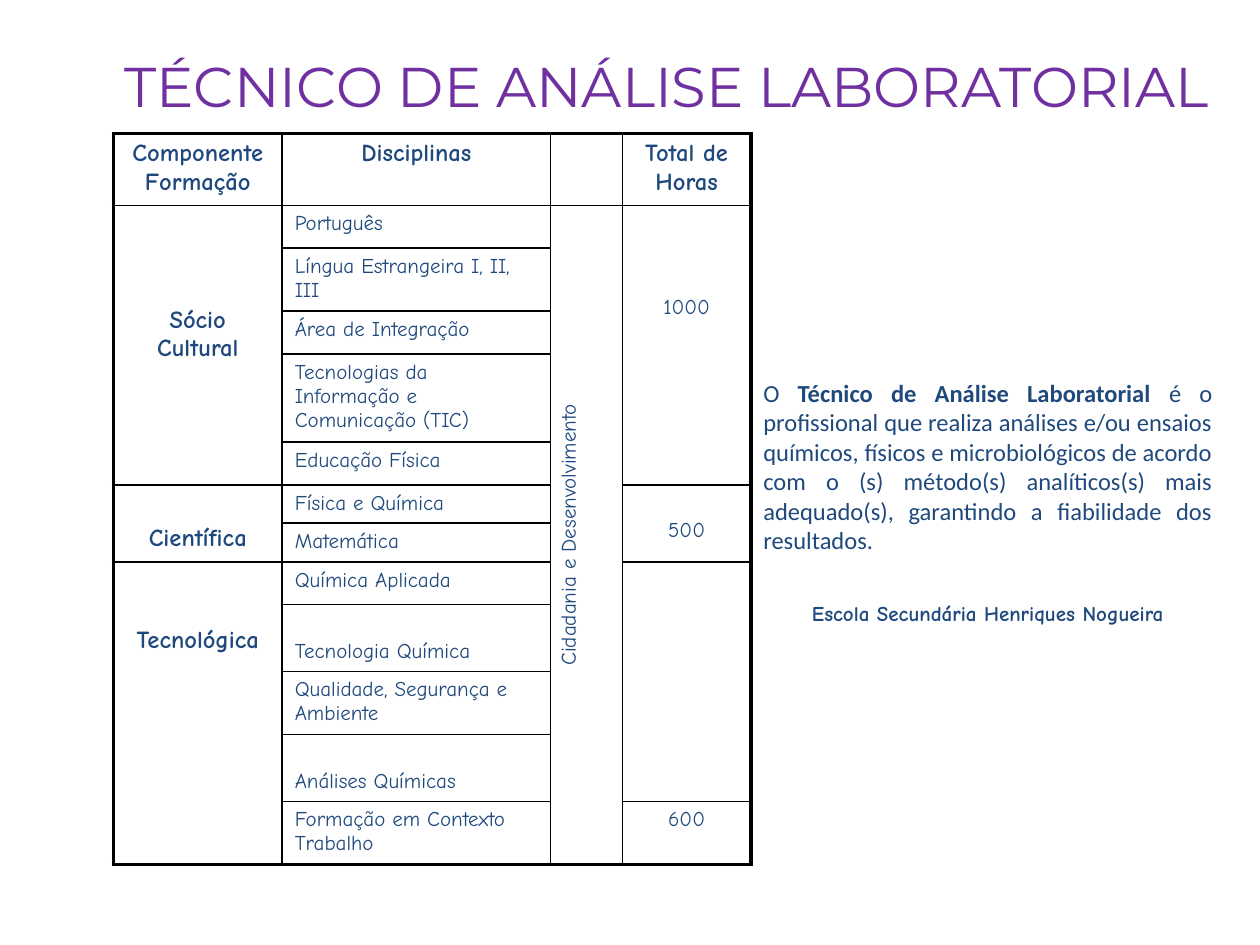
import pptx
import pptx.util
import pptx.dml.color
import pptx.enum.text
import pptx.oxml
import pptx.oxml.ns
from lxml import etree

Inches, Pt = pptx.util.Inches, pptx.util.Pt
ALIGN = pptx.enum.text.PP_ALIGN

COLORS = {"title": "7030A0", "text": "1F497D", "border": "000000"}
TITLE = "TÉCNICO DE ANÁLISE LABORATORIAL"
PROFILE = [
    ("O ", False),
    ("Técnico de Análise Laboratorial ", True),
    ("é o profissional que realiza análises e/ou ensaios químicos, físicos e "
     "microbiológicos de acordo com o (s) método(s) analíticos(s) mais "
     "adequado(s), garantindo a fiabilidade dos resultados.", False),
]
SCHOOL = "Escola Secundária Henriques Nogueira"
HEADERS = ["Componente Formação", "Disciplinas", "", "Total de Horas"]
SHARED_TOPIC = "Cidadania e Desenvolvimento"

# Text, row height, top margin
SUBJECTS = [
    ("Português", 0.34, 0.05),
    ("Língua Estrangeira I, II, III", 0.5, 0.05),
    ("Área de Integração", 0.34, 0.05),
    ("Tecnologias da Informação e Comunicação (TIC)", 0.7, 0.05),
    ("Educação Física", 0.34, 0.05),
    ("Física e Química", 0.3, 0.05),
    ("Matemática", 0.31, 0.05),
    ("Química Aplicada", 0.34, 0.05),
    ("Tecnologia Química", 0.52, 0.28),
    ("Qualidade, Segurança e Ambiente", 0.5, 0.05),
    ("Análises Químicas", 0.52, 0.28),
    ("Formação em Contexto Trabalho", 0.49, 0.05),
]
# Text, rows covered, top margin
COMPONENTS = [("Sócio Cultural", 5, 0.8), ("Científica", 2, 0.31), ("Tecnológica", 5, 0.51)]
HOURS = [("1000", 5, 0.72), ("500", 2, 0.27), ("", 4, 0.05), ("600", 1, 0.05)]
COLUMN_WIDTHS = [1.34, 2.13, 0.57, 1.02]
HEADER_HEIGHT = 0.57

HEADING = {"name": "Comic Neue", "size": Pt(14), "bold": True}
BODY = {"name": "Comic Neue", "size": Pt(12), "bold": False}


def add_run(paragraph, text, style, color="text"):
    run = paragraph.add_run()
    run.text = text
    for key, value in style.items():
        setattr(run.font, key, value)
    run.font.color.rgb = pptx.dml.color.RGBColor.from_string(COLORS[color])


def fill_cell(cell, text, style, align=ALIGN.CENTER, top=0.05):
    cell.margin_top = Inches(top)
    paragraph = cell.text_frame.paragraphs[0]
    paragraph.alignment = align
    if text:
        add_run(paragraph, text, style)
    else:
        paragraph.font.size = style["size"]


def fill_blocks(table, column, blocks, style):
    row = 1
    for text, span, top in blocks:
        cell = table.cell(row, column)
        if span > 1:
            cell.merge(table.cell(row + span - 1, column))
        fill_cell(cell, text, style, top=top)
        row += span


def set_borders(cell, widths):
    properties = cell._tc.get_or_add_tcPr()
    for index, (side, width) in enumerate(widths.items()):
        line = etree.Element(pptx.oxml.ns.qn("a:" + side), w=str(Pt(width)))
        fill = etree.SubElement(line, pptx.oxml.ns.qn("a:solidFill"))
        etree.SubElement(fill, pptx.oxml.ns.qn("a:srgbClr"), val=COLORS["border"])
        properties.insert(index, line)


presentation = pptx.Presentation()
presentation.slide_width, presentation.slide_height = Inches(10), Inches(7.5)
slide = presentation.slides.add_slide(presentation.slide_layouts[6])

# Title
title = slide.shapes.add_textbox(Inches(0.86), Inches(0.36), Inches(8.87), Inches(0.55))
title.text_frame.word_wrap = False
heading = title.text_frame.paragraphs[0]
heading.alignment = ALIGN.CENTER
add_run(heading, TITLE, {"name": "Montserrat", "size": Pt(32)}, "title")

# Study plan
row_heights = [HEADER_HEIGHT] + [height for _, height, _ in SUBJECTS]
last_row, last_column = len(row_heights) - 1, len(COLUMN_WIDTHS) - 1
plan = slide.shapes.add_table(
    len(row_heights), len(COLUMN_WIDTHS), Inches(0.9), Inches(1.06),
    Inches(sum(COLUMN_WIDTHS)), Inches(sum(row_heights))).table
plan.first_row = plan.horz_banding = False
for column, width in zip(plan.columns, COLUMN_WIDTHS):
    column.width = Inches(width)
for row, height in zip(plan.rows, row_heights):
    row.height = Inches(height)

for column, text in enumerate(HEADERS):
    fill_cell(plan.cell(0, column), text, HEADING)
for row, (text, _, top) in enumerate(SUBJECTS, 1):
    fill_cell(plan.cell(row, 1), text, BODY, ALIGN.LEFT, top)
fill_blocks(plan, 0, COMPONENTS, HEADING)
fill_blocks(plan, 2, [(SHARED_TOPIC, len(SUBJECTS), 0.05)], BODY)
fill_blocks(plan, 3, HOURS, BODY)
plan.cell(1, 2)._tc.get_or_add_tcPr().set("vert", "vert270")

# Heavy outer frame, thin inner rules
for row in range(last_row + 1):
    for column in range(last_column + 1):
        cell = plan.cell(row, column)
        cell.fill.background()
        bottom = row + (cell.span_height if cell.is_merge_origin else 1) - 1
        set_borders(cell, {
            "lnL": 2.25 if column == 0 else 1,
            "lnR": 2.25 if column == last_column else 1,
            "lnT": 2.25 if row == 0 else 1,
            "lnB": 2.25 if bottom == last_row else 1,
        })

# Professional profile
profile = slide.shapes.add_textbox(Inches(5.96), Inches(2.95), Inches(3.76), Inches(2.42))
profile.text_frame.word_wrap = True
description = profile.text_frame.paragraphs[0]
description.alignment = ALIGN.JUSTIFY
for text, bold in PROFILE:
    add_run(description, text, {"name": "Calibri", "size": Pt(14), "bold": bold})
school = profile.text_frame.add_paragraph()
school.alignment = ALIGN.CENTER
school.space_before = Pt(26.5)
add_run(school, SCHOOL, {**BODY, "bold": True})

presentation.save("out.pptx")
